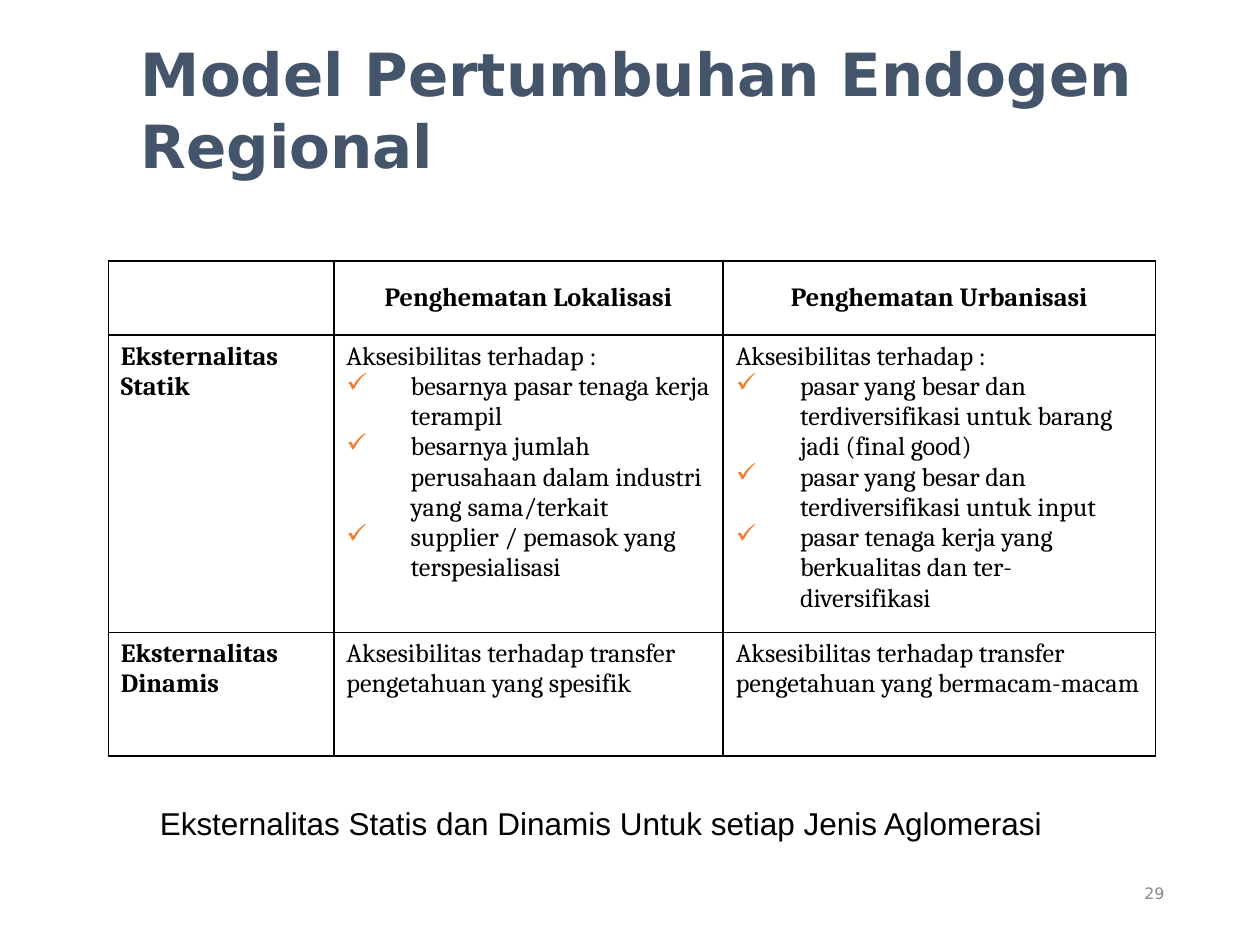
from lxml.etree import SubElement
from pptx import Presentation
from pptx.dml.color import RGBColor
from pptx.enum.text import MSO_ANCHOR as Anchor, MSO_AUTO_SIZE as AutoSize, PP_ALIGN as Align
from pptx.oxml.ns import qn
from pptx.util import Inches, Pt

COLUMN_WIDTHS = [1.79, 3.09, 3.43]
ROW_HEIGHTS = [0.59, 2.36, 0.98]
HEADERS = ["", "Penghematan Lokalisasi", "Penghematan Urbanisasi"]
ACCESS = "Aksesibilitas terhadap :"
STATIC = [
    [
        "besarnya pasar tenaga kerja terampil",
        "besarnya jumlah perusahaan dalam industri yang sama/terkait",
        "supplier / pemasok yang terspesialisasi",
    ],
    [
        "pasar yang besar dan terdiversifikasi untuk barang jadi (final good)",
        "pasar yang besar dan terdiversifikasi untuk input",
        "pasar tenaga kerja yang berkualitas dan ter- diversifikasi",
    ],
]
DYNAMIC = [
    "Aksesibilitas terhadap transfer pengetahuan yang spesifik",
    "Aksesibilitas terhadap transfer pengetahuan yang bermacam-macam",
]


def color(value):
    return RGBColor.from_string(value)


class SlideBuilder:
    heading_font = "DejaVu Sans"
    table_font = "Cambria"
    caption_font = "Arial"
    ink = "000000"
    title_ink = "44546A"
    muted = "898989"
    accent = "ED7D31"
    hang = 0.51

    def __init__(self, page):
        self.page = page

    def set_text(self, para, text, size, font, ink, bold=False, align=Align.LEFT):
        para.text = text
        para.alignment = align
        para.font.size = Pt(size)
        para.font.name = font
        para.font.bold = bold
        para.font.color.rgb = color(ink)

    def text_box(self, text, left, top, width, height, size, font, ink,
                 anchor=Anchor.TOP, grow=False, **style):
        box = self.page.shapes.add_textbox(
            Inches(left), Inches(top), Inches(width), Inches(height))
        frame = box.text_frame
        frame.word_wrap = True
        frame.vertical_anchor = anchor
        frame.auto_size = AutoSize.SHAPE_TO_FIT_TEXT if grow else AutoSize.NONE
        self.set_text(frame.paragraphs[0], text, size, font, ink, **style)

    def table(self, left, top, widths, heights):
        table = self.page.shapes.add_table(
            len(heights), len(widths), Inches(left), Inches(top),
            Inches(sum(widths)), Inches(sum(heights))).table
        table.first_row = table.horz_banding = False
        for column, width in zip(table.columns, widths):
            column.width = Inches(width)
        for row, height in zip(table.rows, heights):
            row.height = Inches(height)
        for cell in table.iter_cells():
            self.borders(cell)
            cell.fill.background()
        return table

    def borders(self, cell):
        properties = cell._tc.get_or_add_tcPr()
        for side in ("lnL", "lnR", "lnT", "lnB"):
            line = SubElement(properties, qn(f"a:{side}"), w=str(Pt(1)))
            fill = SubElement(line, qn("a:solidFill"))
            SubElement(fill, qn("a:srgbClr"), val=self.ink)

    def hanging(self, para, bullet=None):
        """Set the hanging indent, with a coloured bullet if one is given."""
        properties = para._p.get_or_add_pPr()
        properties.set("marL", str(Inches(self.hang)))
        properties.set("indent", str(-Inches(self.hang)))
        if bullet:
            bullet_color = SubElement(properties, qn("a:buClr"))
            SubElement(bullet_color, qn("a:srgbClr"), val=self.accent)
            SubElement(properties, qn("a:buChar"), char=bullet)

    def cell_text(self, cell, text, hanging=False, **style):
        para = cell.text_frame.paragraphs[0]
        if hanging:
            self.hanging(para)
        self.set_text(para, text, 15, self.table_font, self.ink, **style)

    def cell_list(self, cell, lead, items):
        self.cell_text(cell, lead, hanging=True)
        for item in items:
            para = cell.text_frame.add_paragraph()
            self.hanging(para, "✓")
            self.set_text(para, item, 15, self.table_font, self.ink)


def main():
    deck = Presentation()
    deck.slide_width, deck.slide_height = Inches(10), Inches(7.5)
    slide = SlideBuilder(deck.slides.add_slide(deck.slide_layouts[6]))

    table = slide.table(0.86, 2.07, COLUMN_WIDTHS, ROW_HEIGHTS)
    for column, header in enumerate(HEADERS):
        cell = table.cell(0, column)
        cell.vertical_anchor = Anchor.MIDDLE
        if header:
            slide.cell_text(cell, header, hanging=True, bold=True, align=Align.CENTER)
    for row, label in enumerate(["Eksternalitas Statik", "Eksternalitas Dinamis"], 1):
        slide.cell_text(table.cell(row, 0), label, bold=True)
    for column, (items, effect) in enumerate(zip(STATIC, DYNAMIC), 1):
        slide.cell_list(table.cell(1, column), ACCESS, items)
        slide.cell_text(table.cell(2, column), effect)

    slide.text_box("29", 7.17, 6.83, 2.17, 0.52, 9, slide.heading_font, slide.muted,
                   anchor=Anchor.MIDDLE, align=Align.RIGHT)
    slide.text_box("Model Pertumbuhan Endogen Regional", 1.02, 0.5, 8.15, 0.98, 34,
                   slide.heading_font, slide.title_ink, anchor=Anchor.BOTTOM, bold=True)
    slide.text_box("Eksternalitas Statis dan Dinamis Untuk setiap Jenis Aglomerasi",
                   1.17, 6.33, 7.83, 0.4, 18, slide.caption_font, slide.ink, grow=True)
    deck.save("out.pptx")


if __name__ == "__main__":
    main()
